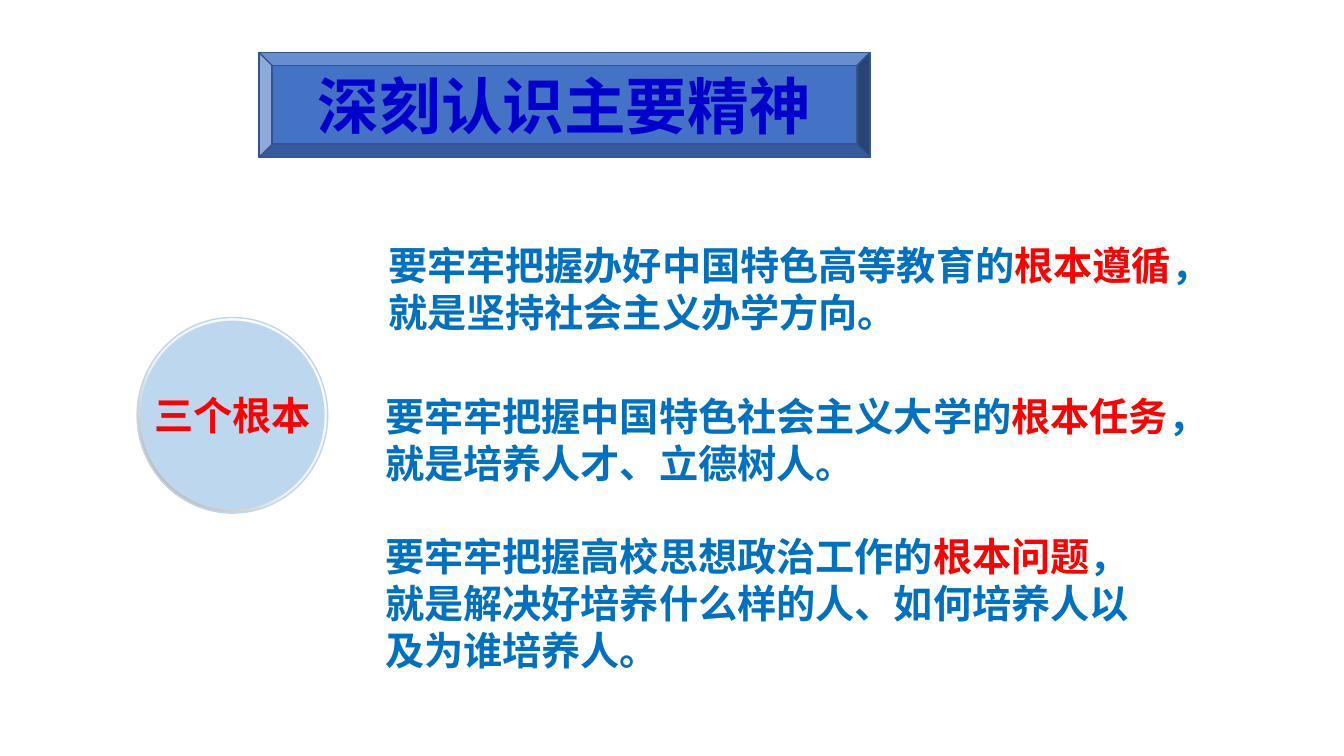
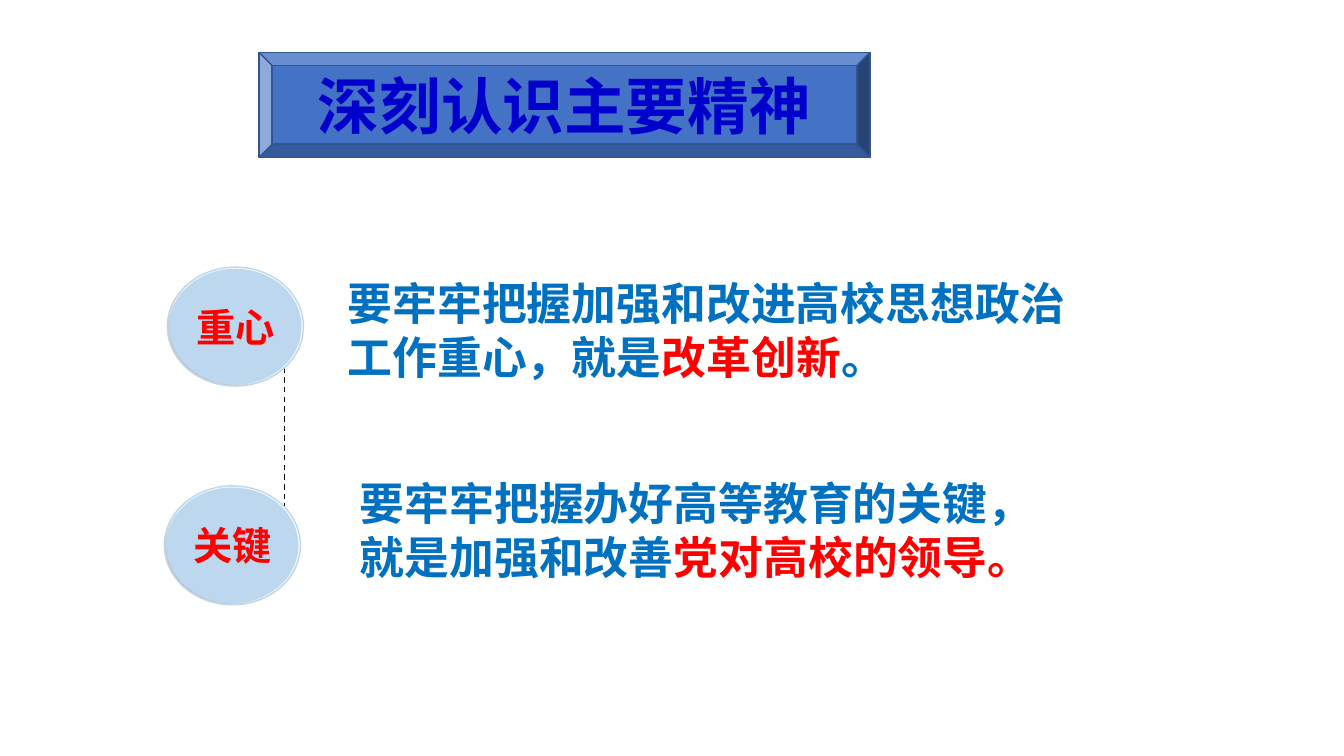
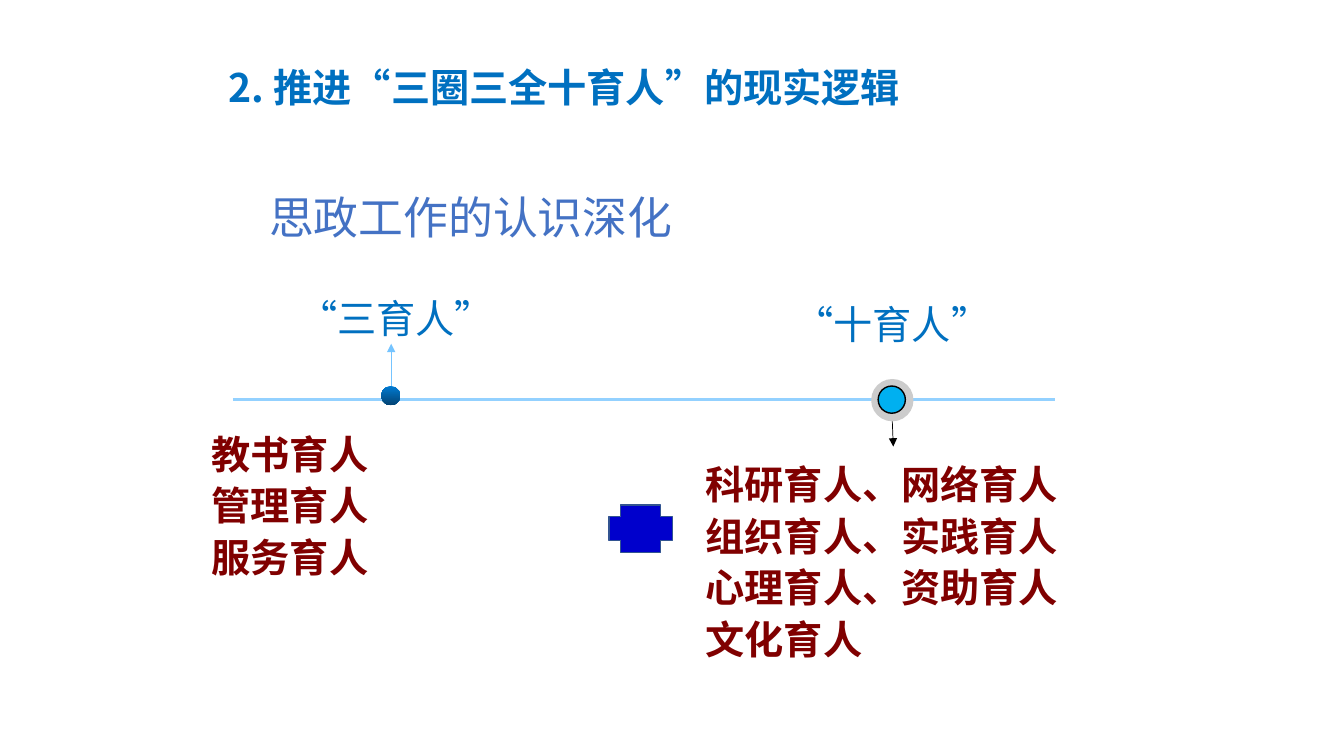
from pptx import Presentation
from pptx.dml.color import RGBColor
from pptx.enum.dml import MSO_LINE
from pptx.enum.shapes import MSO_CONNECTOR, MSO_SHAPE
from pptx.enum.text import MSO_ANCHOR, MSO_AUTO_SIZE, PP_ALIGN
from pptx.oxml import parse_xml
from pptx.oxml.ns import nsdecls, qn
from pptx.util import Inches, Pt
from lxml import etree

LEFT, CENTER = PP_ALIGN.LEFT, PP_ALIGN.CENTER
TOP, MIDDLE = MSO_ANCHOR.TOP, MSO_ANCHOR.MIDDLE
FIXED = MSO_AUTO_SIZE.NONE
OVAL, DONUT = MSO_SHAPE.OVAL, MSO_SHAPE.DONUT
BEVEL, CROSS = MSO_SHAPE.BEVEL, MSO_SHAPE.CROSS
STRAIGHT, DASH = MSO_CONNECTOR.STRAIGHT, MSO_LINE.DASH

LATIN, HAN, KANJI = "Arial", "Noto Sans CJK SC", "Noto Sans CJK JP"
BLUE, RED, NAVY, MAROON = "0070C0", "FF0000", "0000CC", "800000"
ACCENT, EDGE, PALE = "4472C4", "325491", "BDD7EE"
SILVER = [(0, "FFFFFF"), (55, "F2F2F2"), (100, "A6A6A6")]
OCEAN = [(0, "007BD3"), (100, "034373")]
BANNER = (2.57, 0.52, 6.06, 1.04)


def color(code):
    return RGBColor.from_string(code)


def place(box):
    return [Inches(value) for value in box]


def add_run(para, text, size, tint, bold=False, font=LATIN):
    run = para.add_run()
    run.text = text
    run.font.size = Pt(size)
    run.font.bold = bold
    run.font.name = font
    run.font.color.rgb = color(tint)
    east = etree.SubElement(run.font._element, qn("a:ea"))
    east.set("typeface", HAN if font == LATIN else font)


def add_text(slide, box, lines, size, bold=False, font=LATIN, align=LEFT, space=1):
    frame = slide.shapes.add_textbox(*place(box)).text_frame
    frame.word_wrap = True
    for index, line in enumerate(lines):
        para = frame.add_paragraph() if index else frame.paragraphs[0]
        para.alignment = align
        para.line_spacing = space
        for text, tint in line:
            add_run(para, text, size, tint, bold, font)


def add_form(slide, kind, box, fill, edge=None):
    form = slide.shapes.add_shape(kind, *place(box))
    form.shadow.inherit = False
    if isinstance(fill, str):
        form.fill.solid()
        form.fill.fore_color.rgb = color(fill)
    if edge:
        form.line.color.rgb = color(edge)
        form.line.width = Pt(1)
    else:
        form.line.fill.background()
    return form


def add_grade(form, stops, angle):
    marks = "".join(
        f'<a:gs pos="{pos * 1000}"><a:srgbClr val="{tint}"/></a:gs>'
        for pos, tint in stops)
    grade = parse_xml(
        f'<a:gradFill {nsdecls("a")} rotWithShape="1"><a:gsLst>{marks}</a:gsLst>'
        f'<a:lin ang="{angle * 60000}" scaled="0"/></a:gradFill>')
    form._element.spPr.find(qn("a:prstGeom")).addnext(grade)


def add_line(slide, start, end, tint, width, dash=None, arrow=False):
    link = slide.shapes.add_connector(STRAIGHT, *place(start + end))
    link.line.color.rgb = color(tint)
    link.line.width = Pt(width)
    if dash:
        link.line.dash_style = dash
    if arrow:
        tail = etree.SubElement(link.line._get_or_add_ln(), qn("a:tailEnd"))
        tail.set("type", "triangle")
    etree.SubElement(link._element.spPr, qn("a:effectLst"))


def new_slide(deck, title, box, size, tint, font=LATIN, align=LEFT, anchor=TOP):
    slide = deck.slides.add_slide(deck.slide_layouts[5])
    head = slide.shapes.title
    head.left, head.top, head.width, head.height = place(box)
    frame = head.text_frame
    frame.auto_size = FIXED
    frame.word_wrap = True
    frame.vertical_anchor = anchor
    frame.paragraphs[0].alignment = align
    add_run(frame.paragraphs[0], title, size, tint, True, font)
    return slide


def banner_slide(deck):
    slide = new_slide(deck, "深刻认识主要精神", BANNER, 44, NAVY,
                      align=CENTER, anchor=MIDDLE)
    plate = add_form(slide, BEVEL, BANNER, ACCENT, EDGE)
    slide.shapes.title._element.addprevious(plate._element)
    return slide


def add_badge(slide, box, text):
    left, top, width, height = box
    ring = add_form(slide, DONUT, box, None, PALE)
    ring.adjustments[0] = 0.05
    add_grade(ring, SILVER, 135)
    dx, dy = width * 0.02, height * 0.02
    disc = add_form(slide, OVAL,
                    (left + dx, top + dy, width - 2 * dx, height - 2 * dy),
                    PALE, PALE)
    frame = disc.text_frame
    frame.margin_left = frame.margin_right = 0
    frame.margin_top = frame.margin_bottom = 0
    frame.word_wrap = False
    frame.vertical_anchor = MIDDLE
    frame.paragraphs[0].alignment = CENTER
    add_run(frame.paragraphs[0], text, 28, RED, True, HAN)


def add_point(slide, box, size, start, key, end=""):
    parts = [(start, BLUE), (key, RED)]
    if end:
        parts.append((end, BLUE))
    add_text(slide, box, [parts], size, True)


def roots_slide(deck):
    slide = banner_slide(deck)
    add_badge(slide, (1.36, 3.15, 1.89, 1.94), "三个根本")
    points = [
        ((3.75, 2.34, 8.02, 1.04), "要牢牢把握办好中国特色高等教育的",
         "根本遵循", "，就是坚持社会主义办学方向。"),
        ((3.72, 3.84, 8.09, 1.05), "要牢牢把握中国特色社会主义大学的",
         "根本任务", "，就是培养人才、立德树人。"),
        ((3.72, 5.23, 7.89, 1.52), "要牢牢把握高校思想政治工作的",
         "根本问题", "，就是解决好培养什么样的人、如何培养人以及为谁培养人。"),
    ]
    for box, *parts in points:
        add_point(slide, box, 28, *parts)


def focus_slide(deck):
    slide = banner_slide(deck)
    add_line(slide, (2.82, 5.05), (2.82, 3.47), "080808", 1, DASH)
    points = [
        ("重心", (1.66, 2.65), (3.35, 2.69, 7.64, 1.18),
         "要牢牢把握加强和改进高校思想政治工作重心，就是", "改革创新", "。"),
        ("关键", (1.63, 4.82), (3.47, 4.67, 7.03, 1.18),
         "要牢牢把握办好高等教育的关键，就是加强和改善", "党对高校的领导。"),
    ]
    for name, spot, box, *parts in points:
        add_badge(slide, spot + (1.35, 1.18), name)
        add_point(slide, box, 32, *parts)


def add_stage(slide, name, label, items, body):
    add_text(slide, label, [[(name, BLUE)]], 28, align=CENTER, space=1.3)
    add_text(slide, body, [[(item, MAROON)] for item in items], 28, True, HAN,
             space=1.1)


def logic_slide(deck):
    slide = new_slide(deck, "2. 推进“三圈三全十育人”的现实逻辑",
                      (2.17, 0.58, 7.72, 0.57), 28, BLUE, HAN)
    add_text(slide, (2.57, 1.57, 8.49, 0.83), [[("思政工作的认识深化", ACCENT)]],
             32, font=KANJI, space=1.5)
    add_line(slide, (2.31, 3.96), (10.46, 3.96), "93D1FF", 2.25)

    dot = add_form(slide, OVAL, (3.78, 3.83, 0.19, 0.19), None)
    add_grade(dot, OCEAN, 90)
    add_line(slide, (3.88, 3.83), (3.88, 3.41), "75C4FF", 0.5, arrow=True)
    add_stage(slide, "“三育人”", (2.64, 2.73, 2.58, 0.68),
              ["教书育人", "管理育人", "服务育人"], (2, 4.17, 4.21, 1.7))

    add_form(slide, OVAL, (8.64, 3.76, 0.42, 0.42), "CCCCCC")
    add_form(slide, OVAL, (8.71, 3.83, 0.27, 0.27), "00B0F0", "000000")
    add_line(slide, (8.85, 4.18), (8.86, 4.43), "000000", 0.5, arrow=True)
    add_stage(slide, "“十育人”", (7.71, 2.79, 2.28, 0.62),
              ["科研育人、网络育人", "组织育人、实践育人",
               "心理育人、资助育人", "文化育人"], (6.9, 4.47, 4.3, 2.12))
    add_form(slide, CROSS, (6.04, 5.01, 0.63, 0.47), NAVY, EDGE)


def main():
    deck = Presentation()
    deck.slide_width, deck.slide_height = Inches(13.33), Inches(7.5)
    roots_slide(deck)
    focus_slide(deck)
    logic_slide(deck)
    deck.save("out.pptx")


if __name__ == "__main__":
    main()
